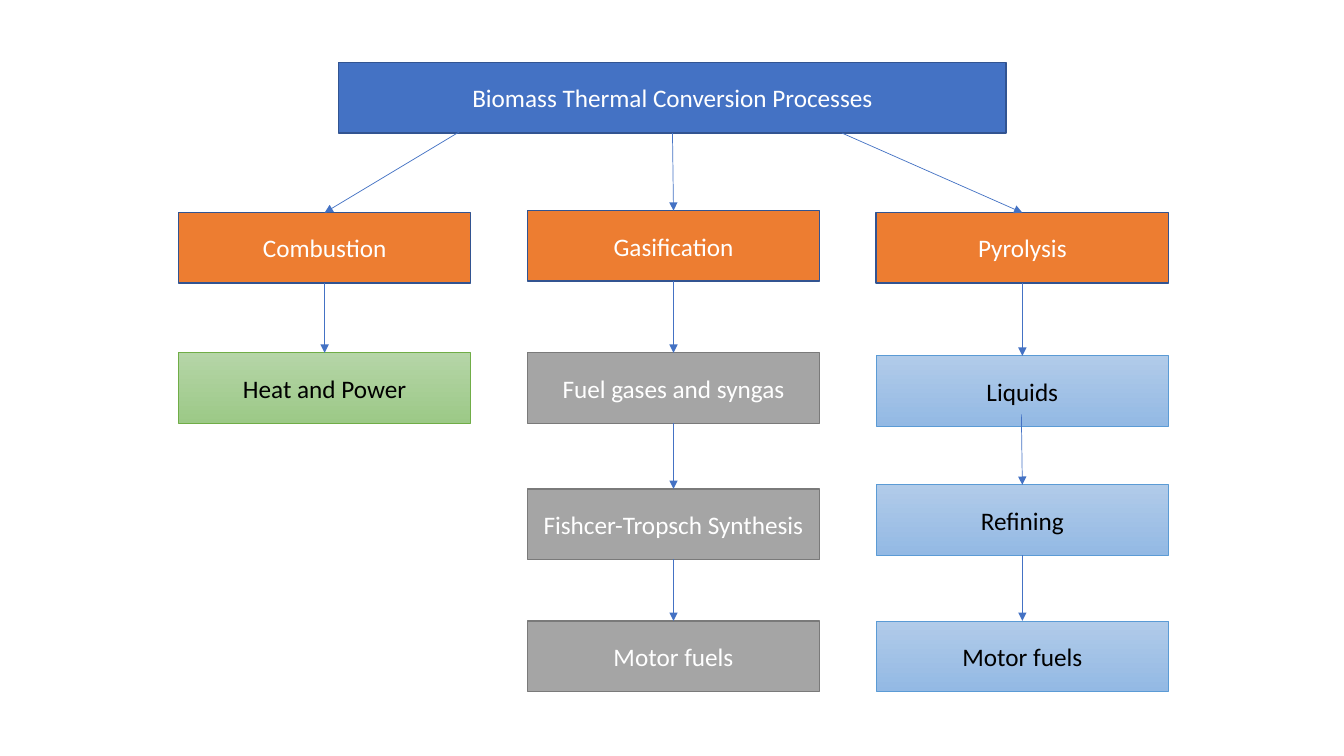
from dataclasses import dataclass

from lxml.etree import SubElement
from pptx import Presentation
from pptx.dml.color import RGBColor
from pptx.enum.shapes import MSO_CONNECTOR, MSO_SHAPE
from pptx.enum.text import MSO_ANCHOR, MSO_AUTO_SIZE, PP_ALIGN
from pptx.oxml.ns import qn
from pptx.util import Inches, Pt

TOP, BOTTOM = 0, 2


@dataclass(frozen=True)
class Style:
    fill: tuple  # one colour, or the top and bottom colours of a gradient
    line: str
    line_width: float = 1
    text: str = "FFFFFF"


@dataclass(frozen=True)
class Theme:
    font: str = "Calibri"
    size: int = 18
    arrow: str = "4472C4"
    arrow_width: float = 0.5
    header: Style = Style(("4472C4",), "325491")
    process: Style = Style(("ED7D31",), "325491")
    heat: Style = Style(("B5D5A7", "9CC987"), "70AD47", 0.5, "000000")
    gas: Style = Style(("A5A5A5",), "7A7A7A")
    liquid: Style = Style(("B1CBE9", "93B9E4"), "5B9BD5", 0.5, "000000")


THEME = Theme()
BOX_WIDTH, BOX_HEIGHT = 2.9, 0.7
FIRST_COLUMN, COLUMN_PITCH = 1.77, 3.46
HEADER_TOP = 0.62

# Product style, start of the branch from the header, then label and top of each box
COLUMNS = [
    (THEME.heat, (4.87, 1.12), [("Combustion", 2.11), ("Heat and Power", 3.5)]),
    (THEME.gas, None, [("Gasification", 2.09), ("Fuel gases and syngas", 3.5),
                       ("Fishcer-Tropsch Synthesis", 4.85), ("Motor fuels", 6.16)]),
    (THEME.liquid, (8.35, 1.32), [("Pyrolysis", 2.11), ("Liquids", 3.53),
                                  ("Refining", 4.81), ("Motor fuels", 6.16)]),
]
# Arrows that start inside their box rather than on its lower edge
INNER_STARTS = {"Liquids": (10.13, 4.11)}


def rgb(value):
    return RGBColor.from_string(value)


def format_box(sp, label, style):
    if len(style.fill) == 1:
        sp.fill.solid()
        sp.fill.fore_color.rgb = rgb(style.fill[0])
    else:
        sp.fill.gradient()
        sp.fill.gradient_angle = 270
        for stop, colour in zip(sp.fill.gradient_stops, style.fill):
            stop.color.rgb = rgb(colour)
    sp.line.color.rgb = rgb(style.line)
    sp.line.width = Pt(style.line_width)
    tf = sp.text_frame
    tf.text = label
    tf.word_wrap = True
    tf.auto_size = MSO_AUTO_SIZE.NONE
    tf.vertical_anchor = MSO_ANCHOR.MIDDLE
    p = tf.paragraphs[0]
    p.alignment = PP_ALIGN.CENTER
    p.font.name = THEME.font
    p.font.size = Pt(THEME.size)
    p.font.color.rgb = rgb(style.text)


def add_header(s, label):
    sp = s.shapes.title
    sp.left, sp.top = Inches(3.36), Inches(HEADER_TOP)
    sp.width, sp.height = Inches(6.62), Inches(BOX_HEIGHT)
    format_box(sp, label, THEME.header)
    return sp


def add_box(s, column, top, label, style):
    left = FIRST_COLUMN + column * COLUMN_PITCH
    sp = s.shapes.add_shape(MSO_SHAPE.RECTANGLE, Inches(left), Inches(top),
                            Inches(BOX_WIDTH), Inches(BOX_HEIGHT))
    sp.shadow.inherit = False
    format_box(sp, label, style)
    return sp


def add_arrow(s, source, target, start=None):
    """Point at the top of target, from start or else from the bottom of source."""
    x, y = start or (0, 0)
    line = s.shapes.add_connector(MSO_CONNECTOR.STRAIGHT, Inches(x), Inches(y),
                                  Inches(x), Inches(y))
    if start is None:
        line.begin_connect(source, BOTTOM)
    line.end_connect(target, TOP)
    line.line.color.rgb = rgb(THEME.arrow)
    line.line.width = Pt(THEME.arrow_width)
    SubElement(line.line._get_or_add_ln(), qn("a:tailEnd"), type="triangle")
    SubElement(line._element.spPr, qn("a:effectLst"))


def main():
    prs = Presentation()
    prs.slide_width, prs.slide_height = Inches(13.33), Inches(7.5)
    s = prs.slides.add_slide(prs.slide_layouts[5])
    header = add_header(s, "Biomass Thermal Conversion Processes")
    for column, (product_style, start, steps) in enumerate(COLUMNS):
        source, style = header, THEME.process
        for label, top in steps:
            box = add_box(s, column, top, label, style)
            add_arrow(s, source, box, start)
            source, style = box, product_style
            start = INNER_STARTS.get(label)
    prs.save("out.pptx")


if __name__ == "__main__":
    main()
